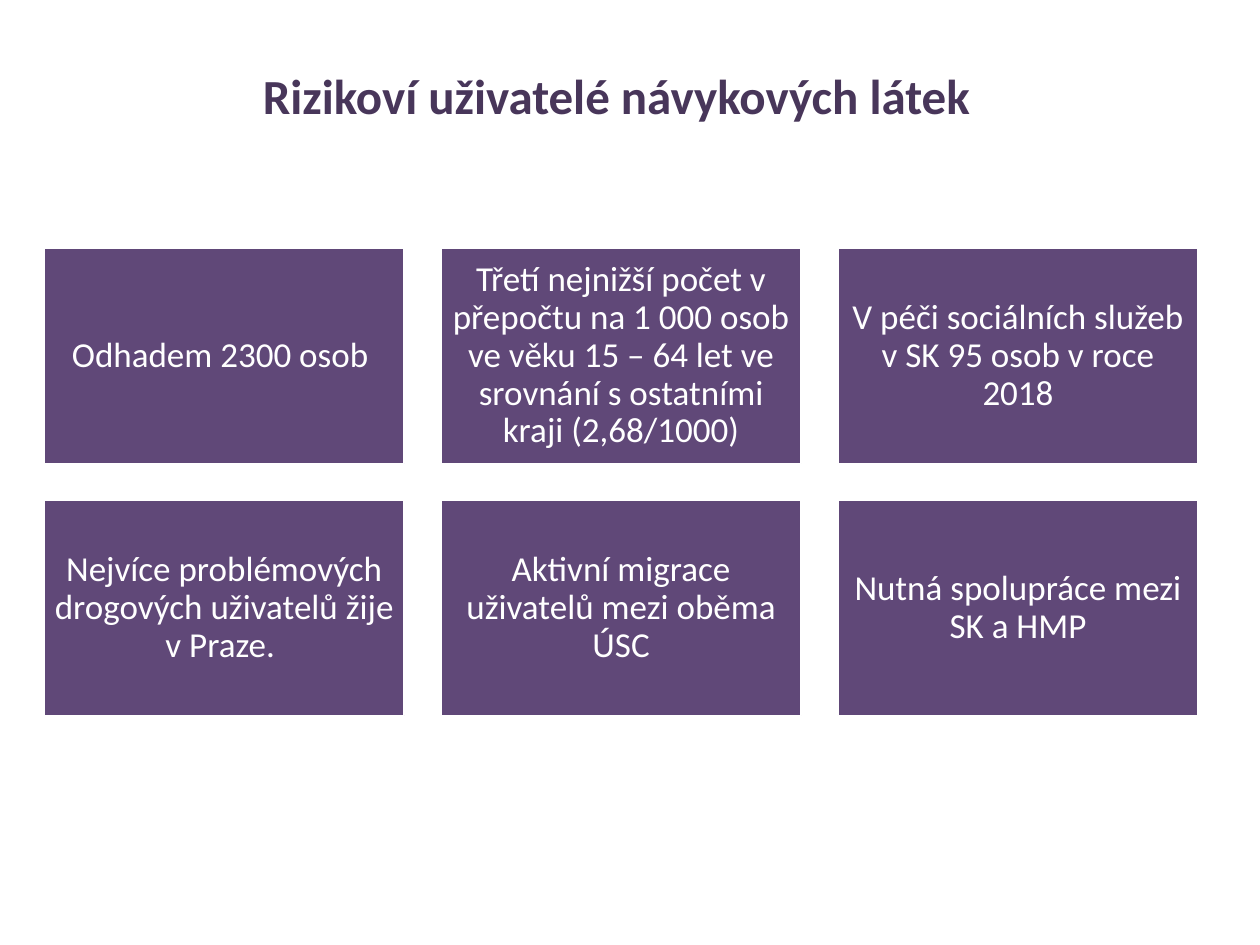
from dataclasses import dataclass

from pptx import Presentation
from pptx.dml.color import RGBColor
from pptx.enum import shapes, text
from pptx.util import Inches, Pt

FONT = "Calibri"
WHITE, PURPLE, DARK_PURPLE = "FFFFFF", "604878", "48365A"
COLUMNS = 3
LEFT, TOP = 0.35, 1.97
CARD_WIDTH, CARD_HEIGHT, GAP = 2.86, 1.71, 0.29
FACTS = (
    "Odhadem 2300 osob ",
    "Třetí nejnižší počet v přepočtu na 1 000 osob ve věku 15 – 64 let ve srovnání s ostatními kraji (2,68/1000)",
    "V péči sociálních služeb v SK 95 osob v roce 2018",
    "Nejvíce problémových drogových uživatelů žije v Praze. ",
    "Aktivní migrace uživatelů mezi oběma ÚSC",
    "Nutná spolupráce mezi SK a HMP",
)


@dataclass
class Card:
    """A fact and its cell in the grid."""
    wording: str
    column: int
    row: int


def color(value: str) -> RGBColor:
    """Turn a hex string into a colour."""
    return RGBColor.from_string(value)


def write(shape, wording: str, size: int, hue: str, anchor, margins: tuple, bold: bool = False) -> None:
    """Fill a shape with one centred paragraph."""
    frame = shape.text_frame
    frame.text = wording
    frame.word_wrap = True
    frame.vertical_anchor = anchor
    frame.margin_left = frame.margin_right = Inches(margins[0])
    frame.margin_top = frame.margin_bottom = Inches(margins[1])
    paragraph = frame.paragraphs[0]
    paragraph.alignment = text.PP_ALIGN.CENTER
    paragraph.line_spacing = 0.9
    font = paragraph.runs[0].font
    font.name, font.size, font.bold = FONT, Pt(size), bold
    font.color.rgb = color(hue)


def add_title(slide, wording: str) -> None:
    """Add the slide heading."""
    box = slide.shapes.add_textbox(Inches(0.28), Inches(0.52), Inches(9.22), Inches(1.02))
    write(box, wording, 28, DARK_PURPLE, text.MSO_ANCHOR.TOP, (0.1, 0.05), bold=True)


def add_card(slide, card: Card) -> None:
    """Draw a fact card in its grid cell."""
    shape = slide.shapes.add_shape(
        shapes.MSO_SHAPE.RECTANGLE,
        Inches(LEFT + card.column * (CARD_WIDTH + GAP)),
        Inches(TOP + card.row * (CARD_HEIGHT + GAP)),
        Inches(CARD_WIDTH), Inches(CARD_HEIGHT),
    )
    shape.shadow.inherit = False
    shape.fill.solid()
    shape.fill.fore_color.rgb = color(PURPLE)
    shape.line.color.rgb = color(WHITE)
    shape.line.width = Pt(1)
    write(shape, card.wording, 20, WHITE, text.MSO_ANCHOR.MIDDLE, (0.08, 0.08))


def main() -> None:
    """Build and save the slide."""
    presentation = Presentation()
    presentation.slide_width, presentation.slide_height = Inches(10), Inches(7.5)
    slide = presentation.slides.add_slide(presentation.slide_layouts[6])
    add_title(slide, "Rizikoví uživatelé návykových látek")
    for index, wording in enumerate(FACTS):
        row, column = divmod(index, COLUMNS)
        add_card(slide, Card(wording, column, row))
    presentation.save("out.pptx")


if __name__ == "__main__":
    main()
